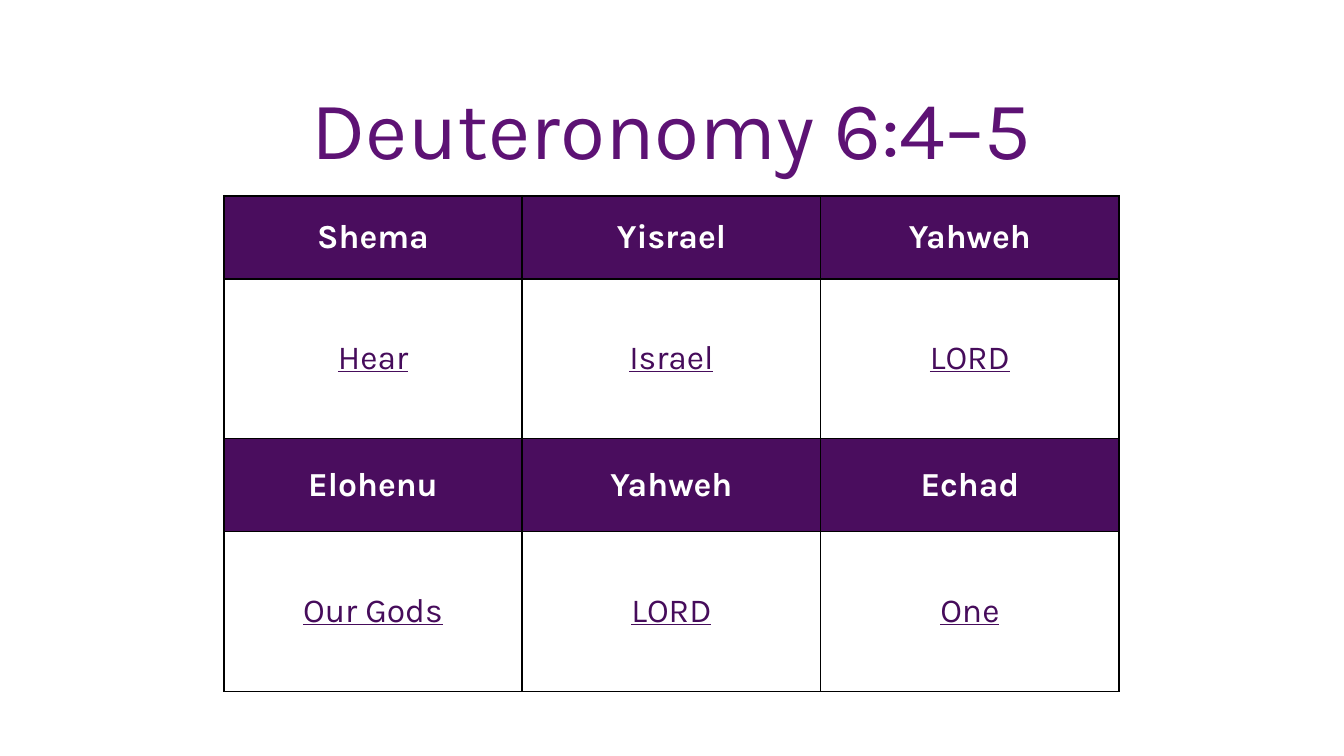
import dataclasses

import lxml.etree
import pptx
import pptx.dml.color
import pptx.enum.text
import pptx.oxml.ns
import pptx.slide
import pptx.table
import pptx.text.text
import pptx.util

Cm = pptx.util.Cm
FONT = "Karla"
COLORS = {
    "title": "5D1274",
    "band": "4A0D5E",
    "head": "FFFFFF",
    "gloss": "460C5B",
    "line": "000000",
}


@dataclasses.dataclass
class Row:
    words: tuple[str, ...]
    height: float
    head: bool


ROWS = [
    Row(("Shema", "Yisrael", "Yahweh"), 1.57, True),
    Row(("Hear", "Israel", "LORD"), 3.02, False),
    Row(("Elohenu", "Yahweh", "Echad"), 1.76, True),
    Row(("Our Gods", "LORD", "One"), 3.02, False),
]
WIDTH = 5.64


def tint(name: str) -> pptx.dml.color.RGBColor:
    return pptx.dml.color.RGBColor.from_string(COLORS[name])


def write(frame: pptx.text.text.TextFrame, text: str, *, size: float, color: str,
          bold: bool = False, under: bool = False, space: float = 1.0) -> None:
    line = frame.paragraphs[0]
    line.alignment = pptx.enum.text.PP_ALIGN.CENTER
    line.line_spacing = space
    run = line.add_run()
    run.text = text
    run.font.name = FONT
    run.font.size = pptx.util.Pt(size)
    run.font.bold = bold
    run.font.underline = under
    run.font.color.rgb = tint(color)


def edge(cell: pptx.table._Cell) -> None:
    qn = pptx.oxml.ns.qn
    props = cell._tc.get_or_add_tcPr()
    for spot, side in enumerate(("lnL", "lnR", "lnT", "lnB")):
        line = lxml.etree.Element(qn(f"a:{side}"), w=str(pptx.util.Pt(1)))
        fill = lxml.etree.SubElement(line, qn("a:solidFill"))
        lxml.etree.SubElement(fill, qn("a:srgbClr"), val=COLORS["line"])
        props.insert(spot, line)


def draw_title(slide: pptx.slide.Slide, text: str) -> None:
    title = slide.shapes.title
    title.left, title.top = Cm(1.27), Cm(1.02)
    title.width, title.height = Cm(22.86), Cm(2.97)
    frame = title.text_frame
    frame.word_wrap = True
    frame.auto_size = pptx.enum.text.MSO_AUTO_SIZE.NONE
    frame.vertical_anchor = pptx.enum.text.MSO_ANCHOR.MIDDLE
    write(frame, text, size=44, color="title", space=0.9)


def draw_cell(cell: pptx.table._Cell, text: str, head: bool) -> None:
    cell.vertical_anchor = pptx.enum.text.MSO_ANCHOR.MIDDLE
    if head:
        cell.fill.solid()
        cell.fill.fore_color.rgb = tint("band")
    else:
        cell.fill.background()
    edge(cell)
    write(cell.text_frame, text, size=18, color="head" if head else "gloss",
          bold=head, under=not head)


def draw_grid(slide: pptx.slide.Slide, rows: list[Row]) -> None:
    count = len(rows[0].words)
    high = sum(row.height for row in rows)
    grid = slide.shapes.add_table(len(rows), count, Cm(4.23), Cm(3.7),
                                  Cm(WIDTH * count), Cm(high)).table
    grid.first_row = grid.horz_banding = False
    for col in grid.columns:
        col.width = Cm(WIDTH)
    for r, row in enumerate(rows):
        grid.rows[r].height = Cm(row.height)
        for c, word in enumerate(row.words):
            draw_cell(grid.cell(r, c), word, row.head)


def main() -> None:
    deck = pptx.Presentation()
    deck.slide_width, deck.slide_height = Cm(25.4), Cm(14.29)
    slide = deck.slides.add_slide(deck.slide_layouts[5])
    draw_title(slide, "Deuteronomy 6:4–5")
    draw_grid(slide, ROWS)
    deck.save("out.pptx")


if __name__ == "__main__":
    main()
